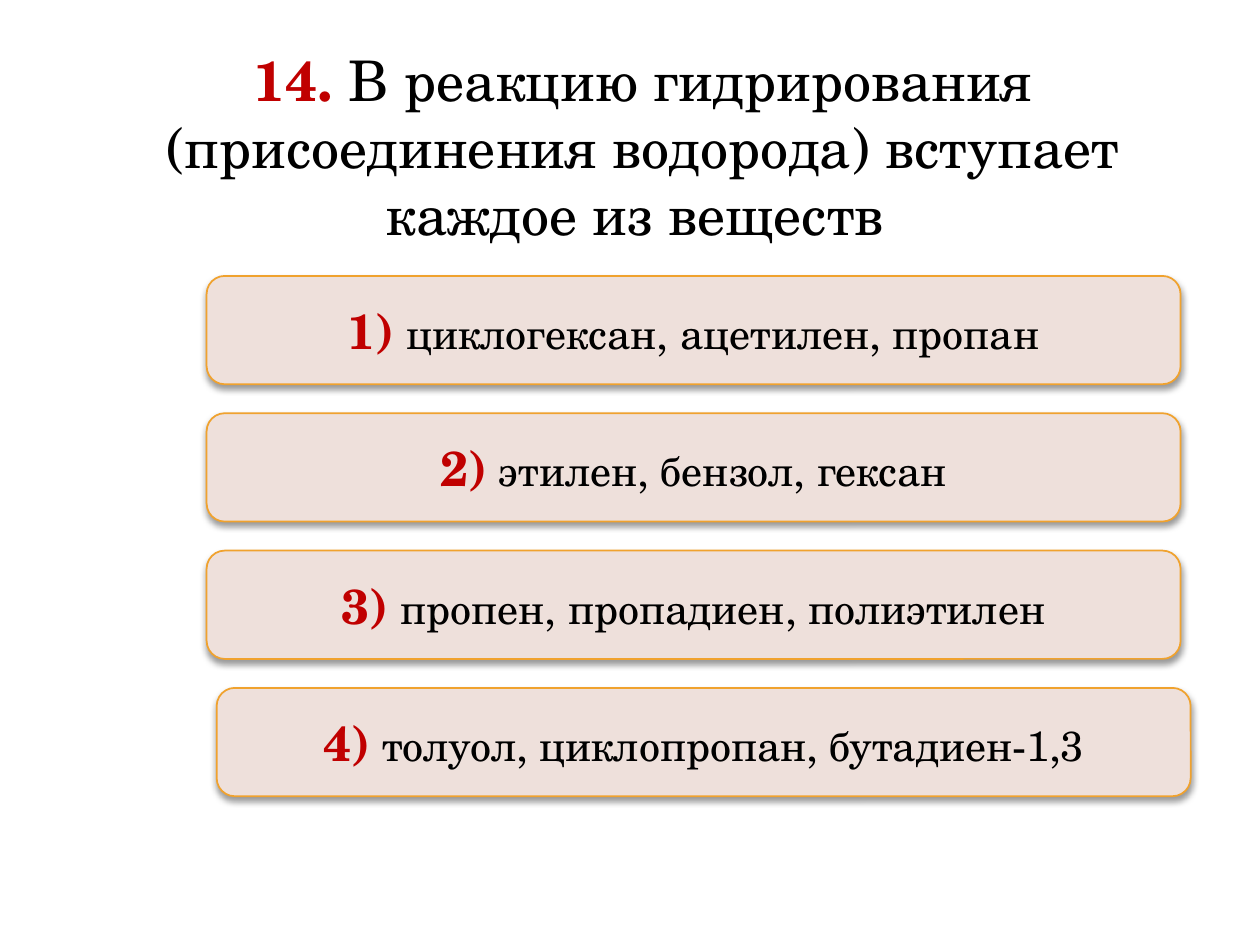
"""Build a chemistry quiz slide with a question and four answer options."""
import lxml.etree
import pptx
import pptx.dml.color
import pptx.enum.shapes
import pptx.enum.text
import pptx.oxml.ns
import pptx.util

Inches = pptx.util.Inches
RGBColor = pptx.dml.color.RGBColor
qn = pptx.oxml.ns.qn

FONT = "TeX Gyre Schola"
RED = RGBColor(0xC0, 0x00, 0x00)
BLACK = RGBColor(0x00, 0x00, 0x00)
BEIGE = RGBColor(0xEE, 0xE0, 0xDB)
ORANGE = RGBColor(0xF0, 0xA2, 0x2E)


def write_numbered(text_frame, number, wording, number_size, wording_size):
    text_frame.word_wrap = True
    paragraph = text_frame.paragraphs[0]
    paragraph.alignment = pptx.enum.text.PP_ALIGN.CENTER
    for text, size, color, bold in (
        (number, number_size, RED, True),
        (" " + wording, wording_size, BLACK, False),
    ):
        run = paragraph.add_run()
        run.text = text
        run.font.name = FONT
        run.font.size = pptx.util.Pt(size)
        run.font.bold = bold
        run.font.color.rgb = color


def add_shadow(shape):
    shape.shadow.inherit = False
    effects = shape._element.spPr.find(qn("a:effectLst"))
    shadow = lxml.etree.SubElement(
        effects, qn("a:outerShdw"), blurRad=str(pptx.util.Pt(4)),
        dist=str(pptx.util.Pt(2)), dir="5400000", rotWithShape="0")
    color = lxml.etree.SubElement(shadow, qn("a:srgbClr"), val=str(BLACK))
    lxml.etree.SubElement(color, qn("a:alpha"), val="40000")


presentation = pptx.Presentation()
presentation.slide_width = Inches(10)
presentation.slide_height = Inches(7.5)
slide = presentation.slides.add_slide(presentation.slide_layouts[6])

question = slide.shapes.add_textbox(Inches(1.09), Inches(0.31), Inches(8.03), Inches(2.26))
write_numbered(
    question.text_frame, "14.",
    "В реакцию гидрирования (присоединения водорода) вступает каждое из веществ ", 32, 32)

answers = (
    (1.64, "циклогексан, ацетилен, пропан"),
    (1.64, "этилен, бензол, гексан"),
    (1.64, "пропен, пропадиен, полиэтилен"),
    (1.72, "толуол, циклопропан, бутадиен-1,3"),
)
for index, (left, wording) in enumerate(answers):
    answer = slide.shapes.add_shape(
        pptx.enum.shapes.MSO_SHAPE.ROUNDED_RECTANGLE,
        Inches(left), Inches(2.19 + 1.09 * index), Inches(7.73), Inches(0.86))
    answer.fill.solid()
    answer.fill.fore_color.rgb = BEIGE
    answer.line.color.rgb = ORANGE
    answer.line.width = pptx.util.Pt(1)
    add_shadow(answer)
    answer.text_frame.vertical_anchor = pptx.enum.text.MSO_ANCHOR.MIDDLE
    write_numbered(answer.text_frame, f"{index + 1})", wording, 28, 24)

presentation.save("out.pptx")
